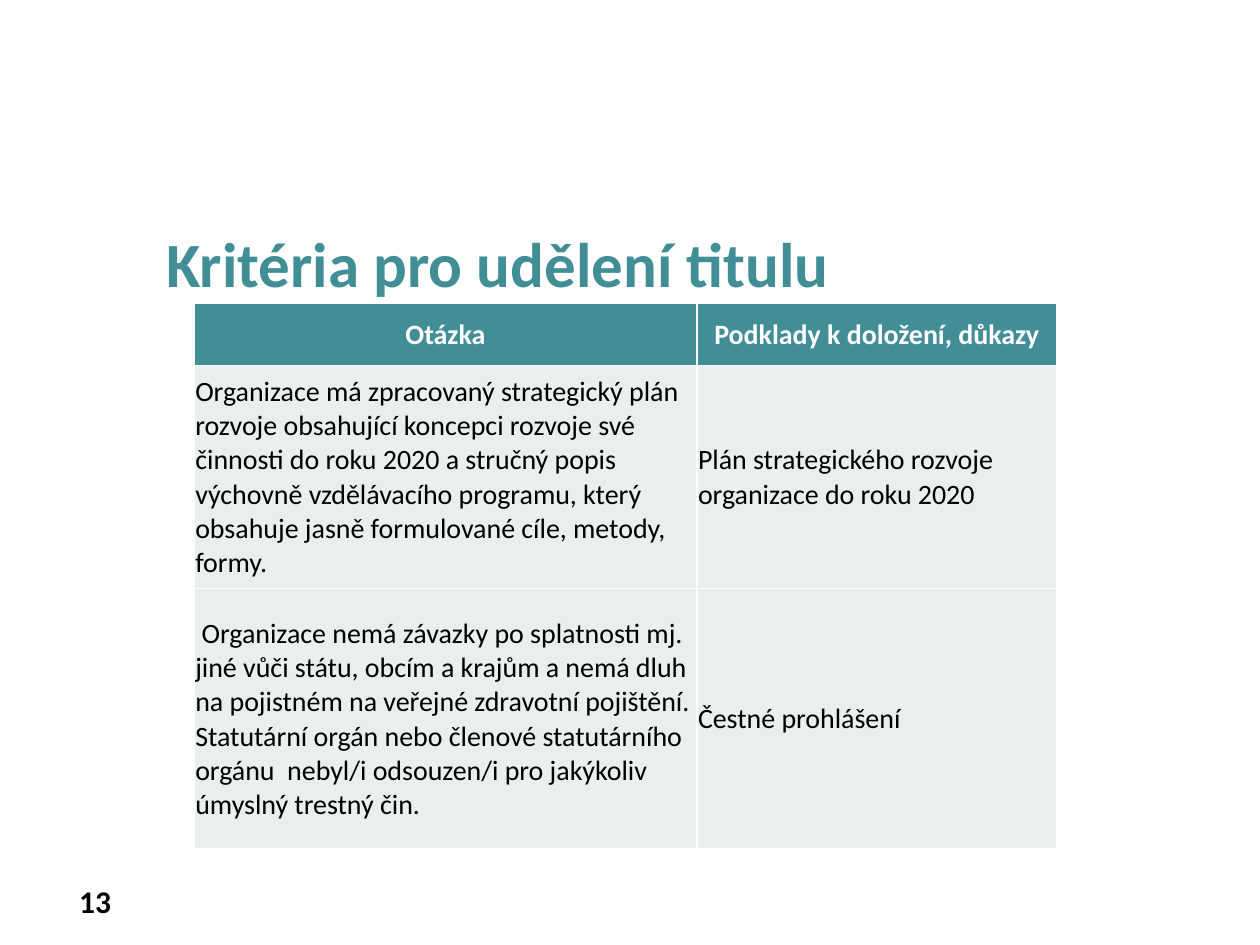
from dataclasses import dataclass

import pptx
import pptx.dml.color
import pptx.enum.text
import pptx.oxml
import pptx.oxml.ns
import pptx.util
from pptx.util import Inches

Align = pptx.enum.text.PP_ALIGN
Anchor = pptx.enum.text.MSO_ANCHOR


@dataclass(frozen=True)
class Theme:
    font: str = "Calibri"
    teal: str = "418E96"
    pale: str = "E9EEEF"
    white: str = "FFFFFF"
    black: str = "000000"
    title_size: int = 36
    number_size: int = 18
    table_size: int = 16
    border_width: int = 1


THEME = Theme()

CRITERIA = [
    ("Otázka", "Podklady k doložení, důkazy"),
    (
        "Organizace má zpracovaný strategický plán rozvoje obsahující koncepci "
        "rozvoje své činnosti do roku 2020 a stručný popis výchovně vzdělávacího "
        "programu, který obsahuje jasně formulované cíle, metody, formy.",
        "Plán strategického rozvoje organizace do roku 2020",
    ),
    (
        " Organizace nemá závazky po splatnosti mj. jiné vůči státu, obcím a krajům "
        "a nemá dluh na pojistném na veřejné zdravotní pojištění. Statutární orgán "
        "nebo členové statutárního orgánu  nebyl/i odsouzen/i pro jakýkoliv "
        "úmyslný trestný čin.",
        "Čestné prohlášení",
    ),
]
COLUMN_WIDTHS = [3.99, 2.86]
ROW_HEIGHTS = [0.49, 1.77, 2.07]


def rgb(color):
    return pptx.dml.color.RGBColor.from_string(color)


def write(frame, text, size, color, bold, align):
    frame.word_wrap = True
    para = frame.paragraphs[0]
    para.text = text
    para.alignment = align
    para.font.name = THEME.font
    para.font.size = pptx.util.Pt(size)
    para.font.bold = bold
    para.font.color.rgb = rgb(color)


def add_text(page, area, text, size, color, align=Align.LEFT, anchor=Anchor.TOP):
    box = page.shapes.add_textbox(*map(Inches, area))
    frame = box.text_frame
    frame.vertical_anchor = anchor
    write(frame, text, size, color, True, align)
    return frame


def set_borders(cell):
    properties = cell._tc.get_or_add_tcPr()
    width = pptx.util.Pt(THEME.border_width)
    for index, side in enumerate(("lnL", "lnR", "lnT", "lnB")):
        border = pptx.oxml.parse_xml(
            f'<a:{side} {pptx.oxml.ns.nsdecls("a")} w="{width}"><a:solidFill>'
            f'<a:srgbClr val="{THEME.white}"/></a:solidFill></a:{side}>'
        )
        properties.insert(index, border)


def fill_cell(cell, text, is_header):
    cell.margin_left = cell.margin_right = cell.margin_top = Inches(0.01)
    cell.margin_bottom = 0
    cell.vertical_anchor = Anchor.MIDDLE
    cell.fill.solid()
    cell.fill.fore_color.rgb = rgb(THEME.teal if is_header else THEME.pale)
    write(
        cell.text_frame,
        text,
        THEME.table_size,
        THEME.white if is_header else THEME.black,
        is_header,
        Align.CENTER if is_header else Align.LEFT,
    )
    set_borders(cell)


def add_criteria_table(page, left, top):
    table = page.shapes.add_table(
        len(ROW_HEIGHTS),
        len(COLUMN_WIDTHS),
        Inches(left),
        Inches(top),
        Inches(sum(COLUMN_WIDTHS)),
        Inches(sum(ROW_HEIGHTS)),
    ).table
    for column, width in zip(table.columns, COLUMN_WIDTHS):
        column.width = Inches(width)
    for index, (row, height) in enumerate(zip(table.rows, ROW_HEIGHTS)):
        row.height = Inches(height)
        for cell, text in zip(row.cells, CRITERIA[index]):
            fill_cell(cell, text, index == 0)


def main():
    deck = pptx.Presentation()
    deck.slide_width, deck.slide_height = Inches(10), Inches(7.5)
    page = deck.slides.add_slide(deck.slide_layouts[6])
    add_text(page, (0.27, 6.95, 0.71, 0.4), "13", THEME.number_size,
             THEME.black, Align.RIGHT, Anchor.MIDDLE)
    title = add_text(page, (1.22, 1.7, 8.28, 5.51), "Kritéria pro udělení titulu",
                     THEME.title_size, THEME.teal)
    title.margin_top = Inches(0.08)
    add_criteria_table(page, 1.54, 2.41)
    deck.save("out.pptx")


if __name__ == "__main__":
    main()
